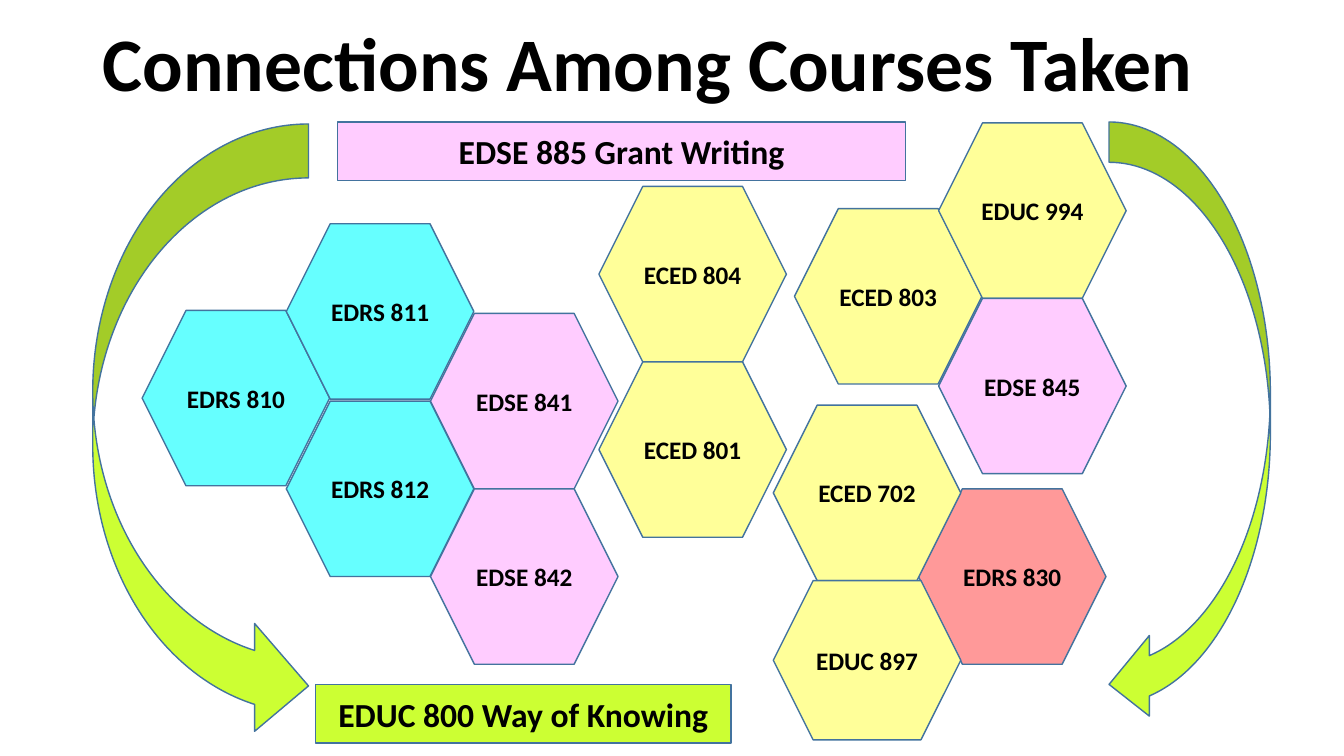
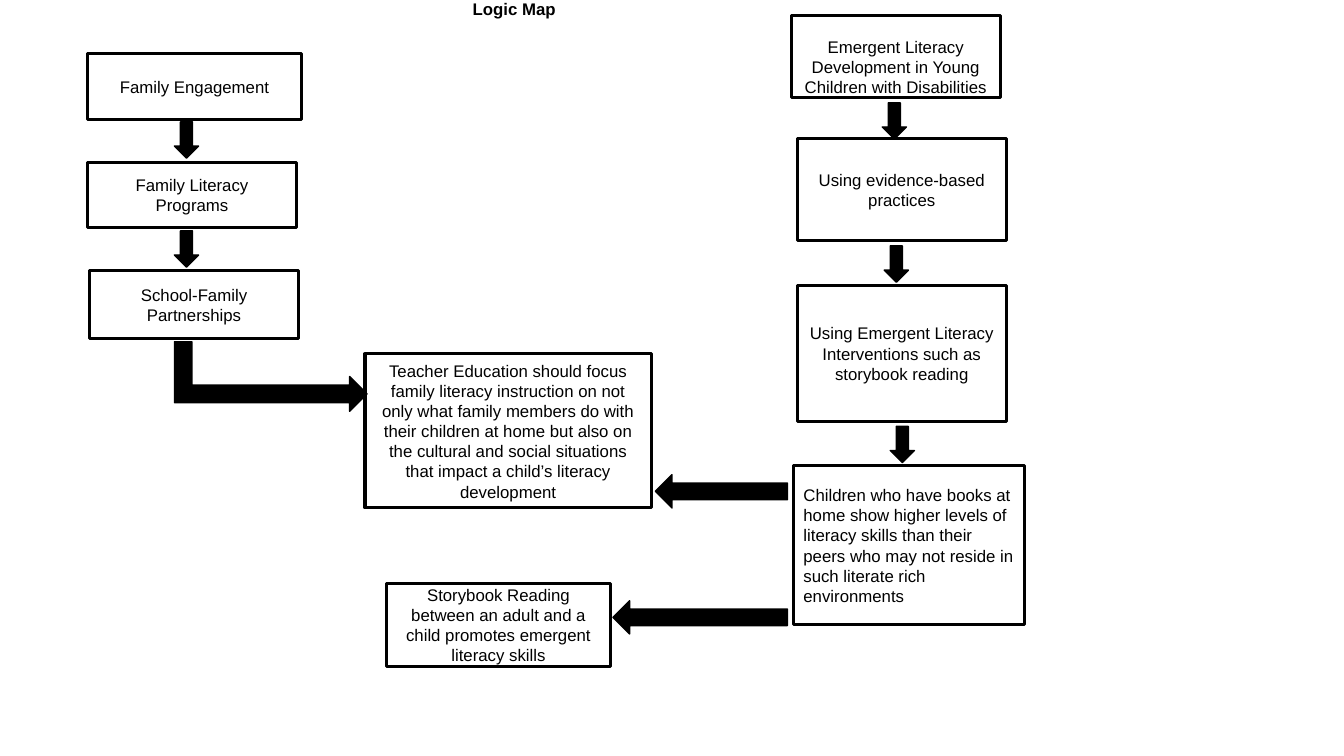
from dataclasses import dataclass

from pptx import Presentation
from pptx.dml.color import RGBColor
from pptx.enum.shapes import MSO_SHAPE as Shape
from pptx.enum.text import MSO_ANCHOR as Anchor, MSO_AUTO_SIZE as AutoSize, PP_ALIGN as Align
from pptx.util import Inches, Pt


@dataclass(frozen=True)
class Theme:
    black: str = "000000"
    outline: str = "43739E"
    lime: str = "CCFF33"
    cyan: str = "66FFFF"
    pink: str = "FFCCFF"
    red: str = "FF9999"
    yellow: str = "FFFF99"
    course_font: str = "Calibri"
    map_font: str = "Arial"
    title_size: int = 54
    banner_size: int = 24
    course_size: int = 18
    map_size: int = 12
    thin: float = 1
    thick: float = 2.25


T = Theme()


class Deck:
    """Holds the presentation, its style and the current slide."""

    def __init__(self):
        self.prs = Presentation()
        self.prs.slide_width, self.prs.slide_height = Inches(13.33), Inches(7.5)
        self.s = None

    def slide(self):
        self.s = self.prs.slides.add_slide(self.prs.slide_layouts[5])

    def label(self, sp, text, size, font, bold=False, align=Align.CENTER, insets=None):
        tf = sp.text_frame
        tf.word_wrap = True
        tf.auto_size = AutoSize.NONE
        tf.vertical_anchor = Anchor.MIDDLE
        if insets:
            (tf.margin_left, tf.margin_top,
             tf.margin_right, tf.margin_bottom) = [Inches(v) for v in insets]
        p = tf.paragraphs[0]
        p.alignment = align
        r = p.add_run()
        r.text = text
        r.font.name, r.font.size, r.font.bold = font, Pt(size), bold
        r.font.color.rgb = RGBColor.from_string(T.black)
        return p

    def title(self, text, at, size, font, align, insets=None):
        sp = self.s.shapes.title
        sp.left, sp.top, sp.width, sp.height = [Inches(v) for v in at]
        p = self.label(sp, text, size, font, True, align, insets)
        p.line_spacing = 0.9

    def shape(self, kind, at, fill=None, line=T.outline, weight=T.thin):
        sp = self.s.shapes.add_shape(kind, *[Inches(v) for v in at])
        sp.shadow.inherit = False
        if fill:
            sp.fill.solid()
            sp.fill.fore_color.rgb = RGBColor.from_string(fill)
        else:
            sp.fill.background()
        sp.line.color.rgb = RGBColor.from_string(line)
        sp.line.width = Pt(weight)
        return sp

    def hexagon(self, text, at, fill):
        sp = self.shape(Shape.HEXAGON, at, fill)
        self.label(sp, text, T.course_size, T.course_font, True, insets=(0, 0, 0, 0))

    def banner(self, text, at, fill):
        sp = self.shape(Shape.RECTANGLE, at, fill)
        self.label(sp, text, T.banner_size, T.course_font, True)

    def box(self, text, at, align=Align.CENTER, insets=None):
        sp = self.shape(Shape.RECTANGLE, at, line=T.black, weight=T.thick)
        self.label(sp, text, T.map_size, T.map_font, align=align, insets=insets)

    def arrow(self, kind, at, rotation=0):
        sp = self.shape(kind, at, T.black, T.black)
        sp.rotation = rotation


def courses_slide(d):
    d.slide()
    d.title("Connections Among Courses Taken", (0.92, 0.09, 11.5, 1.14),
            T.title_size, T.course_font, Align.LEFT)

    # Curved arrows on both sides
    d.shape(Shape.CURVED_RIGHT_ARROW, (0.92, 1.23, 2.14, 6.11), T.lime)
    d.shape(Shape.CURVED_LEFT_ARROW, (11, 1.21, 1.6, 5.98), T.lime)

    # Honeycomb: each stack has a left, a top and its courses downwards
    width, height = 1.86, 1.74
    stacks = [
        (1.41, 3.08, [("EDRS 810", T.cyan)]),
        (2.84, 2.22, [("EDRS 811", T.cyan)]),
        (2.84, 3.98, [("EDRS 812", T.cyan)]),
        (4.27, 3.11, [("EDSE 841", T.pink), ("EDSE 842", T.pink)]),
        (9.11, 4.85, [("EDRS 830", T.red)]),
        (7.67, 4.02, [("ECED 702", T.yellow)]),
        (7.88, 2.07, [("ECED 803", T.yellow)]),
        (5.94, 1.85, [("ECED 804", T.yellow), ("ECED 801", T.yellow)]),
        (9.31, 1.22, [("EDUC 994", T.yellow), ("EDSE 845", T.pink)]),
    ]
    for left, top, courses in stacks:
        for i, (name, fill) in enumerate(courses):
            d.hexagon(name, (left, top + i * height, width, height), fill)
    d.hexagon("EDUC 897", (7.67, 5.76, width, 1.58), T.yellow)

    # Banners above and below
    d.banner("EDSE 885 Grant Writing", (3.35, 1.21, 5.63, 0.58), T.pink)
    d.banner("EDUC 800 Way of Knowing", (3.13, 6.79, 4.12, 0.58), T.lime)


def logic_map_slide(d):
    d.slide()
    d.title("Logic Map", (4.1, 0, 2, 0.2), T.map_size, T.map_font,
            Align.CENTER, (0, 0, 0, 0))

    # Family column
    d.box("Family Engagement", (0.87, 0.53, 2.12, 0.66))
    d.box("Family Literacy Programs", (0.87, 1.61, 2.07, 0.65))
    d.box("School-Family Partnerships", (0.89, 2.68, 2.07, 0.68))

    # Literacy column
    d.box("Emergent Literacy Development in Young Children with Disabilities",
          (7.85, 0.15, 2.07, 0.82), insets=(0.1, 0.2, 0.1, 0))
    d.box("Using evidence-based practices", (7.91, 1.37, 2.07, 1.02))
    d.box("Using Emergent Literacy Interventions such as storybook reading",
          (7.91, 2.83, 2.07, 1.35))
    d.box("Children who have books at home show higher levels of literacy skills "
          "than their peers who may not reside in such literate rich environments",
          (7.87, 4.62, 2.29, 1.58), Align.LEFT)

    # Outcomes
    d.box("Teacher Education should focus family literacy instruction on not only "
          "what family members do with their children at home but also on the "
          "cultural and social situations that impact a child’s literacy development",
          (3.62, 3.51, 2.84, 1.53))
    d.box("Storybook Reading between an adult and a child promotes emergent "
          "literacy skills", (3.83, 5.79, 2.23, 0.82))

    # Arrows down the columns and towards the outcomes
    for left, top in [(1.73, 1.21), (1.73, 2.29), (8.75, 1.02), (8.77, 2.44), (8.83, 4.23)]:
        d.arrow(Shape.DOWN_ARROW, (left, top, 0.24, 0.36))
    for left, top, width in [(6.5, 4.71, 1.31), (6.08, 5.96, 1.73)]:
        d.arrow(Shape.LEFT_ARROW, (left, top, width, 0.33))
    d.arrow(Shape.BENT_UP_ARROW, (2.34, 2.78, 0.69, 1.91), rotation=90)


def main():
    d = Deck()
    courses_slide(d)
    logic_map_slide(d)
    d.prs.save("out.pptx")


if __name__ == "__main__":
    main()
